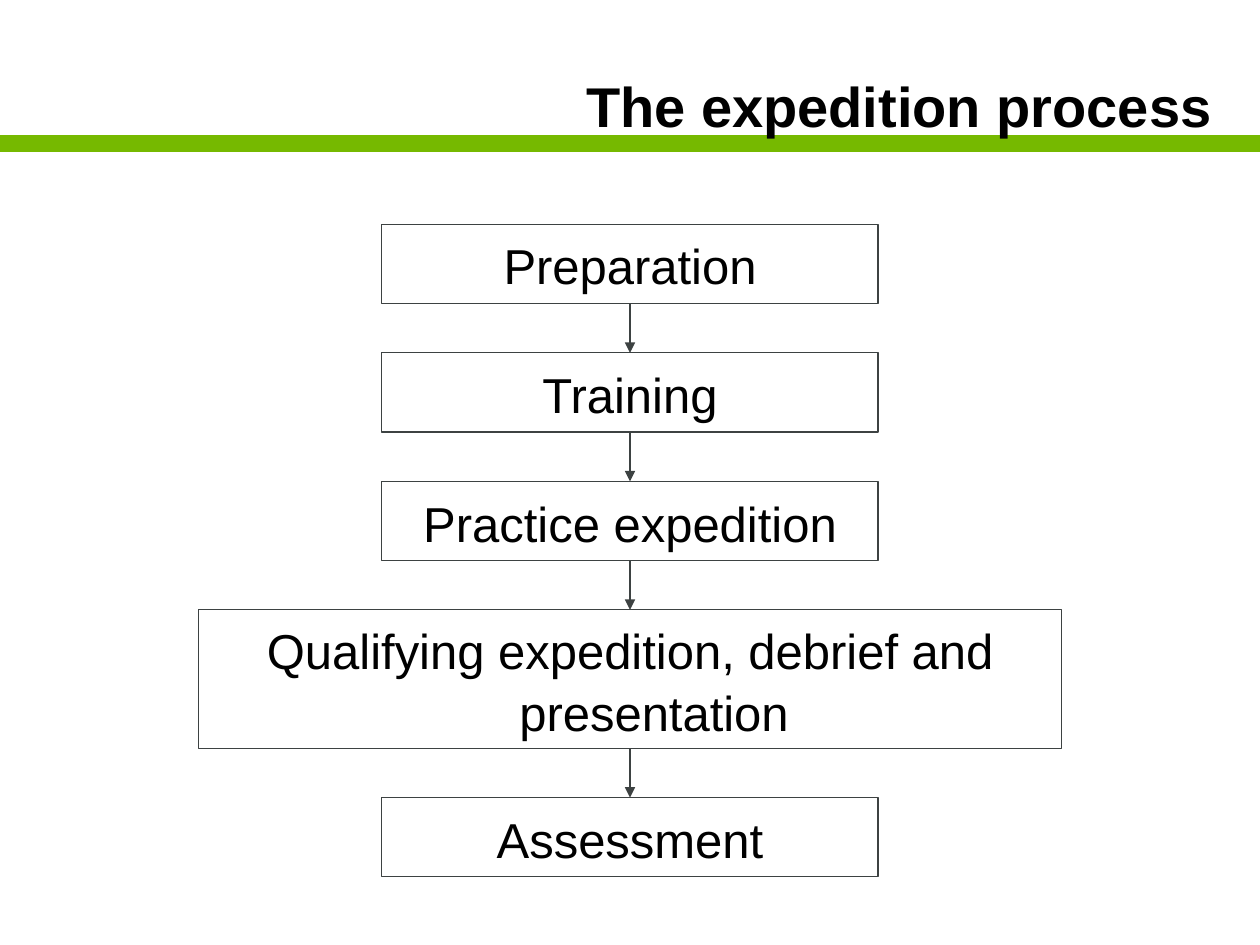
from pptx import Presentation
from pptx.dml.color import RGBColor
from pptx.enum.shapes import MSO_CONNECTOR, MSO_SHAPE
from pptx.enum.text import MSO_ANCHOR, PP_ALIGN
from pptx.oxml.ns import qn
from pptx.util import Inches, Pt
from lxml import etree

STRAIGHT = MSO_CONNECTOR.STRAIGHT
RECT = MSO_SHAPE.RECTANGLE
MIDDLE, BOTTOM = MSO_ANCHOR.MIDDLE, MSO_ANCHOR.BOTTOM
CENTER, RIGHT = PP_ALIGN.CENTER, PP_ALIGN.RIGHT

COLORS = {"text": "000000", "line": "3D4242", "band": "76B900"}
STEPS = [
    ("Preparation", 3.94, 0.63),
    ("Training", 3.94, 0.63),
    ("Practice expedition", 3.94, 0.63),
    ("Qualifying expedition, debrief and presentation", 6.85, 1.1),
    ("Assessment", 3.94, 0.63),
]
MID, TOP, GAP = 5, 1.78, 0.39


class Deck:
    """Holds the style and the current slide."""

    def __init__(self):
        self.prs = Presentation()
        self.prs.slide_width = Inches(10)
        self.prs.slide_height = Inches(7.5)
        self.slide = self.prs.slides.add_slide(self.prs.slide_layouts[6])
        self.font = "Arial"

    def color(self, key):
        return RGBColor.from_string(COLORS[key])

    def label(self, shape, text, size, align, anchor, bold=False):
        frame = shape.text_frame
        frame.word_wrap = True
        frame.vertical_anchor = anchor
        para = frame.paragraphs[0]
        para.text = text
        para.alignment = align
        para.font.name = self.font
        para.font.size = Pt(size)
        para.font.bold = bold
        para.font.color.rgb = self.color("text")
        return para

    def title(self, text):
        box = self.slide.shapes.add_textbox(
            Inches(0.27), Inches(0), Inches(9.45), Inches(1.15))
        self.label(box, text, 32, RIGHT, BOTTOM, True)

    def line(self, start, end, key, width):
        line = self.slide.shapes.add_connector(
            STRAIGHT, *(Inches(v) for v in start + end))
        line.line.color.rgb = self.color(key)
        line.line.width = Pt(width)
        etree.SubElement(line._element.spPr, qn("a:effectLst"))
        return line

    def box(self, text, top, width, height):
        box = self.slide.shapes.add_shape(
            RECT, Inches(MID - width / 2), Inches(top),
            Inches(width), Inches(height))
        box.shadow.inherit = False
        box.fill.background()
        box.line.color.rgb = self.color("line")
        box.line.width = Pt(0.75)
        para = self.label(box, text, 28, CENTER, MIDDLE)
        para.line_spacing = 1.05
        props = para._p.get_or_add_pPr()
        props.set("marL", str(Inches(0.38)))
        props.set("indent", str(Inches(-0.38)))
        return box

    def arrow(self, upper, lower, top):
        line = self.line((MID, top - GAP), (MID, top), "line", 0.75)
        line.begin_connect(upper, 2)
        line.end_connect(lower, 0)
        etree.SubElement(line.line._get_or_add_ln(), qn("a:tailEnd"),
                         type="triangle")


def main():
    deck = Deck()
    deck.line((0, 1.14), (10, 1.14), "band", 10)
    deck.title("The expedition process")
    top, last = TOP, None
    for text, width, height in STEPS:
        box = deck.box(text, top, width, height)
        if last is not None:
            deck.arrow(last, box, top)
        last = box
        top += height + GAP
    deck.prs.save("out.pptx")


if __name__ == "__main__":
    main()
